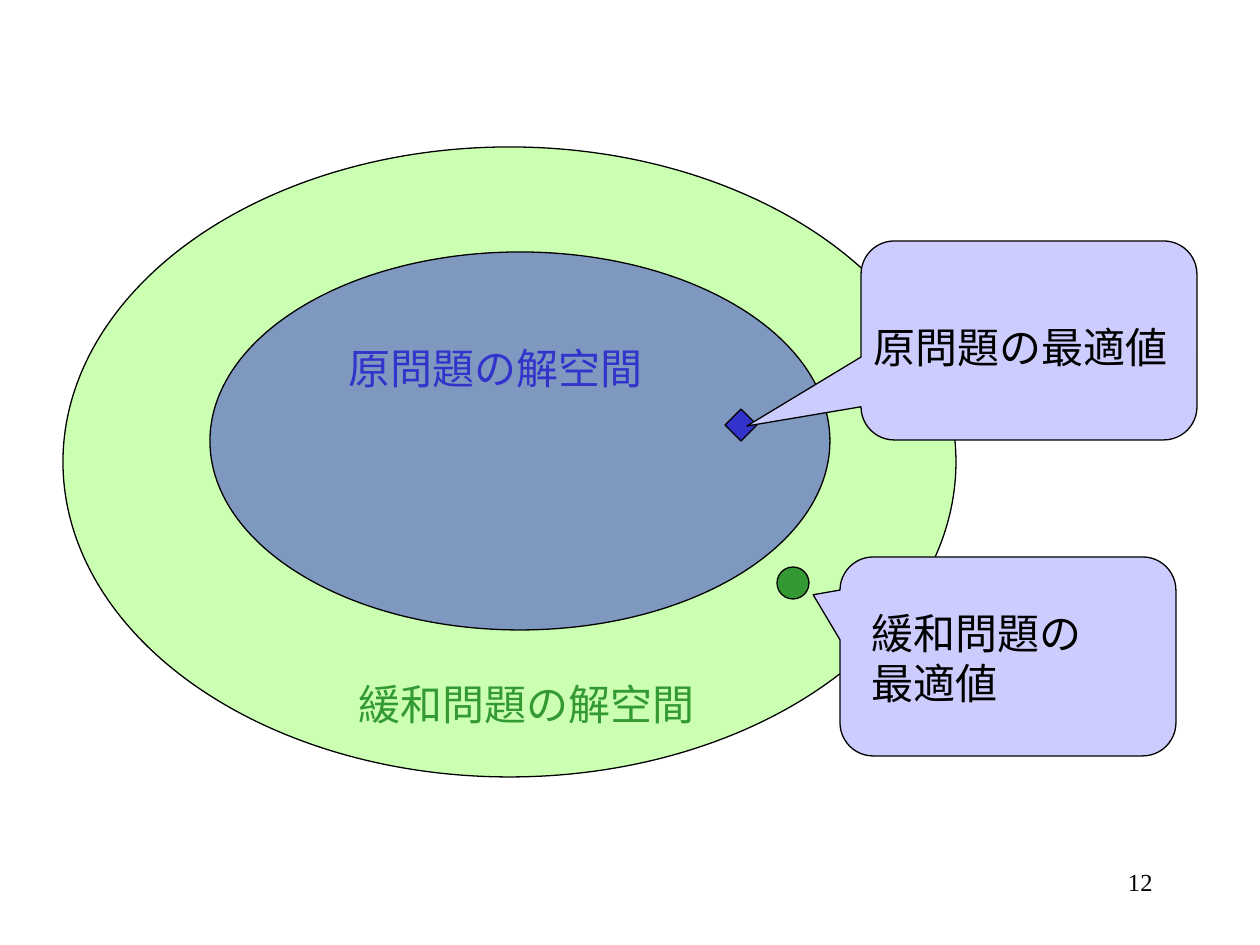
import dataclasses

import pptx
import pptx.dml.color
import pptx.enum.shapes
import pptx.enum.text
import pptx.oxml
import pptx.oxml.ns
import pptx.util

EMU_PER_PX = 914400 / 126
SHAPES = pptx.enum.shapes.MSO_SHAPE
ALIGN = pptx.enum.text.PP_ALIGN
AUTO_SIZE = pptx.enum.text.MSO_AUTO_SIZE


def px(length):
    return pptx.util.Emu(round(length * EMU_PER_PX))


@dataclasses.dataclass(frozen=True)
class Theme:
    font: str = "Times New Roman"
    ink: str = "000000"
    blue: str = "3333CC"
    green: str = "339933"
    light_green: str = "99FF66"
    callout: str = "CCCCFF"
    label_size: int = 24
    number_size: int = 14
    line_width: float = 0.75


class SlideBuilder:
    def __init__(self, slide, theme):
        self.slide = slide
        self.theme = theme

    def shape(self, kind, box, fill, opacity=100, adjustments=()):
        shape = self.slide.shapes.add_shape(kind, *map(px, box))
        shape.shadow.inherit = False
        for index, value in enumerate(adjustments):
            shape.adjustments[index] = value
        shape.fill.solid()
        shape.fill.fore_color.rgb = pptx.dml.color.RGBColor.from_string(fill)
        if opacity < 100:
            color = shape._element.spPr.find(".//" + pptx.oxml.ns.qn("a:srgbClr"))
            alpha = pptx.oxml.parse_xml(
                f'<a:alpha {pptx.oxml.ns.nsdecls("a")} val="{opacity * 1000}"/>')
            color.append(alpha)
        shape.line.color.rgb = pptx.dml.color.RGBColor.from_string(self.theme.ink)
        shape.line.width = pptx.util.Pt(self.theme.line_width)

    def callout(self, left, top, pointer):
        self.shape(SHAPES.ROUNDED_RECTANGULAR_CALLOUT, (left, top, 336, 199),
                   self.theme.callout, adjustments=(*pointer, 0.167))

    def text(self, lines, box, color, size=None, align=ALIGN.LEFT, fit=True):
        text_frame = self.slide.shapes.add_textbox(*map(px, box)).text_frame
        frame_format = {
            "word_wrap": not fit,
            "auto_size": AUTO_SIZE.SHAPE_TO_FIT_TEXT if fit else AUTO_SIZE.NONE,
        }
        for name, value in frame_format.items():
            setattr(text_frame, name, value)
        text_frame.text = "\n".join(lines)
        font_format = {
            "name": self.theme.font,
            "size": pptx.util.Pt(size or self.theme.label_size),
        }
        for paragraph in text_frame.paragraphs:
            paragraph.alignment = align
            for run in paragraph.runs:
                for name, value in font_format.items():
                    setattr(run.font, name, value)
                run.font.color.rgb = pptx.dml.color.RGBColor.from_string(color)


def main():
    theme = Theme()
    presentation = pptx.Presentation()
    presentation.slide_width, presentation.slide_height = px(1260), px(945)
    slide = presentation.slides.add_slide(presentation.slide_layouts[6])
    builder = SlideBuilder(slide, theme)

    # Page number
    builder.text(["12"], (903, 861, 262, 63), theme.ink,
                 size=theme.number_size, align=ALIGN.RIGHT, fit=False)

    # Solution spaces: relaxed problem around the original problem
    builder.shape(SHAPES.OVAL, (63, 147, 893, 630), theme.light_green, opacity=50)
    builder.shape(SHAPES.OVAL, (210, 252, 620, 378), theme.blue, opacity=50)
    builder.text(["原問題の解空間"], (336, 336, 319, 63), theme.blue)
    builder.text(["緩和問題の解空間"], (346, 672, 361, 63), theme.green)

    # Optimal points
    builder.shape(SHAPES.OVAL, (777, 567, 32, 32), theme.green)
    builder.shape(SHAPES.DIAMOND, (725, 409, 32, 32), theme.blue)

    # Callouts naming the optimal values
    builder.callout(840, 557, (-0.58, -0.31))
    builder.text(["緩和問題の", "最適値"], (859, 601, 235, 113), theme.ink)
    builder.callout(861, 241, (-0.84, 0.43))
    builder.text(["原問題の最適値"], (861, 315, 319, 63), theme.ink)

    presentation.save("out.pptx")


if __name__ == "__main__":
    main()
